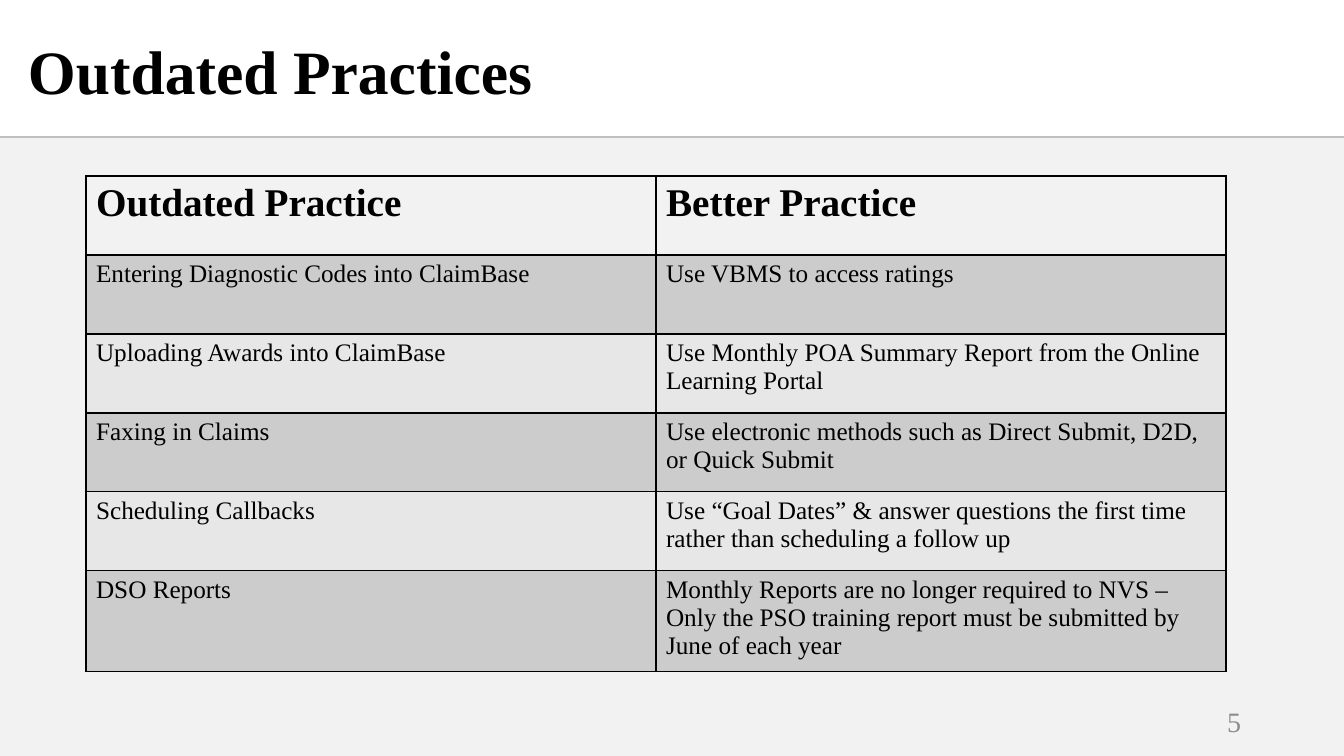
from lxml import etree
from pptx import Presentation
from pptx import util as u
from pptx.dml.color import RGBColor
from pptx.enum import shapes, text
from pptx.oxml.ns import qn

TITLE = "Outdated Practices"
PAGE_NUMBER = "5"
HEADINGS = ("Outdated Practice", "Better Practice")
PRACTICES = [
    ("Entering Diagnostic Codes into ClaimBase", "Use VBMS to access ratings"),
    ("Uploading Awards into ClaimBase",
     "Use Monthly POA Summary Report from the Online Learning Portal"),
    ("Faxing in Claims",
     "Use electronic methods such as Direct Submit, D2D, or Quick Submit"),
    ("Scheduling Callbacks",
     "Use “Goal Dates” & answer questions the first time rather than scheduling a follow up"),
    ("DSO Reports",
     "Monthly Reports are no longer required to NVS – Only the PSO training report "
     "must be submitted by June of each year"),
]

THEME = {
    "font": "Times New Roman",
    "ink": "000000",
    "muted": "8C8C8C",
    "panel": "F2F2F2",
    "rule": "BFBFBF",
    "bands": ("CCCCCC", "E7E7E7"),
    "title": 44,
    "heading": 28,
    "body": 18,
    "page": 20,
}

SLIDE_W, SLIDE_H = 1344, 756
HEADER_H = 137
TABLE_LEFT, TABLE_TOP = 86, 176
COLUMN_W, ROW_H = 570, 79


def px(length):
    return u.Emu(round(length * 914400 / 100.8))


def colour(name):
    return RGBColor.from_string(name)


def style(paragraph, size, ink=THEME["ink"], bold=False):
    paragraph.font.name = THEME["font"]
    paragraph.font.size = u.Pt(size)
    paragraph.font.bold = bold
    paragraph.font.color.rgb = colour(ink)


def add_label(slide, words, box, size, **look):
    frame = slide.shapes.add_textbox(*map(px, box)).text_frame
    frame.word_wrap = True
    frame.vertical_anchor = text.MSO_ANCHOR.MIDDLE
    frame.text = words
    style(frame.paragraphs[0], size, **look)
    return frame.paragraphs[0]


def add_borders(cell):
    properties = cell._tc.get_or_add_tcPr()
    for index, side in enumerate(("a:lnL", "a:lnR", "a:lnT", "a:lnB")):
        border = etree.Element(qn(side), w=str(u.Pt(1)))
        fill = etree.SubElement(border, qn("a:solidFill"))
        etree.SubElement(fill, qn("a:srgbClr"), val=THEME["ink"])
        properties.insert(index, border)


def add_backdrop(slide):
    panel = slide.shapes.add_shape(
        shapes.MSO_SHAPE.RECTANGLE, 0, px(HEADER_H), px(SLIDE_W), px(SLIDE_H - HEADER_H))
    panel.shadow.inherit = False
    panel.fill.solid()
    panel.fill.fore_color.rgb = colour(THEME["panel"])
    panel.line.fill.background()
    rule = slide.shapes.add_connector(
        shapes.MSO_CONNECTOR.STRAIGHT, 0, px(HEADER_H), px(SLIDE_W), px(HEADER_H))
    rule.line.color.rgb = colour(THEME["rule"])
    rule.line.width = u.Pt(1.5)
    etree.SubElement(rule._element.spPr, qn("a:effectLst"))


def add_practices(slide):
    rows = [HEADINGS, *PRACTICES]
    columns = len(HEADINGS)
    table = slide.shapes.add_table(
        len(rows), columns, px(TABLE_LEFT), px(TABLE_TOP),
        px(COLUMN_W * columns), px(ROW_H * len(rows))).table
    for column in table.columns:
        column.width = px(COLUMN_W)
    for r, row in enumerate(rows):
        table.rows[r].height = px(ROW_H)
        for c, words in enumerate(row):
            cell = table.cell(r, c)
            cell.text = words
            is_heading = r == 0
            style(cell.text_frame.paragraphs[0],
                  THEME["heading" if is_heading else "body"], bold=is_heading)
            if is_heading:
                cell.fill.background()
            else:
                cell.fill.solid()
                cell.fill.fore_color.rgb = colour(THEME["bands"][(r - 1) % 2])
            add_borders(cell)


def main():
    deck = Presentation()
    deck.slide_width, deck.slide_height = px(SLIDE_W), px(SLIDE_H)
    slide = deck.slides.add_slide(deck.slide_layouts[6])
    add_backdrop(slide)
    title = add_label(slide, TITLE, (18, 11, 940, 128), THEME["title"], bold=True)
    title.line_spacing = 0.9
    page = add_label(slide, PAGE_NUMBER, (949, 701, 302, 40), THEME["page"], ink=THEME["muted"])
    page.alignment = text.PP_ALIGN.RIGHT
    add_practices(slide)
    deck.save("out.pptx")


if __name__ == "__main__":
    main()
